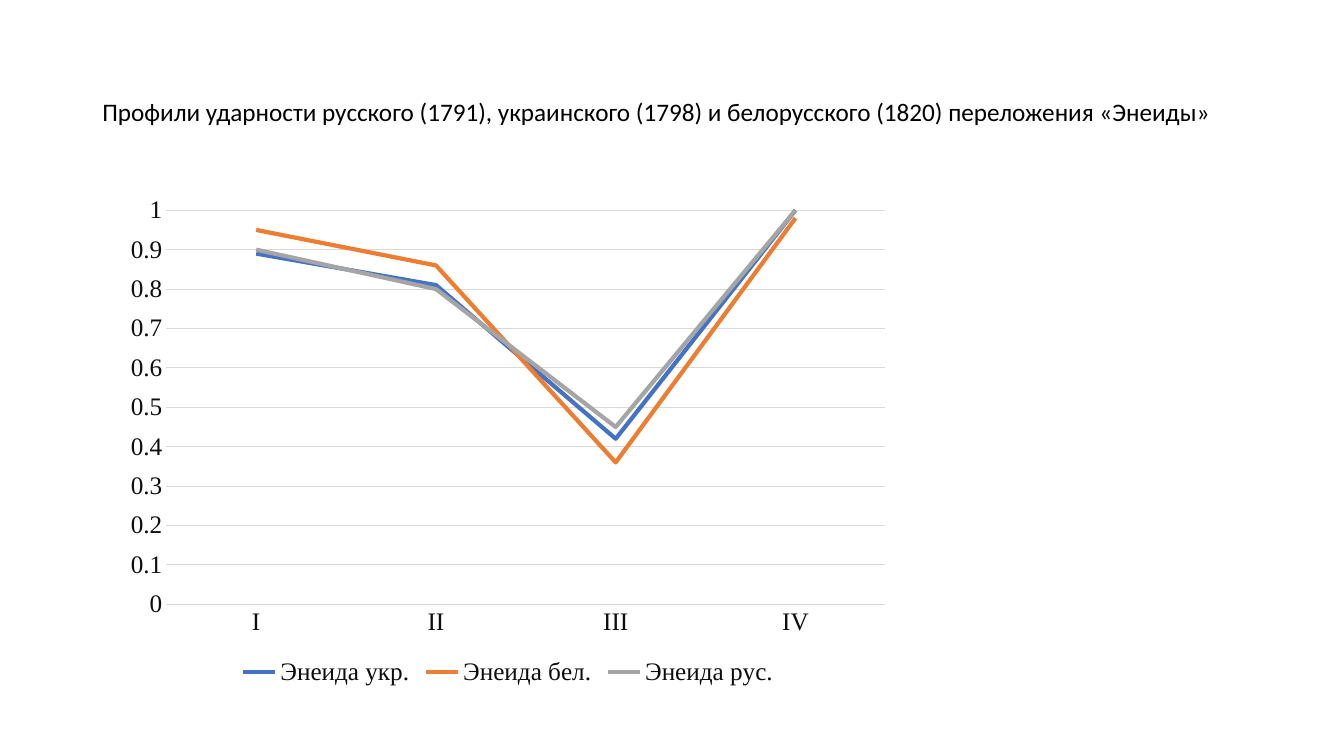
from pptx import Presentation
from pptx.chart.data import CategoryChartData
from pptx.dml.color import RGBColor
from pptx.enum.chart import XL_CHART_TYPE as ChartType
from pptx.enum.chart import XL_LEGEND_POSITION as LegendPosition
from pptx.enum.chart import XL_MARKER_STYLE as MarkerStyle
from pptx.enum.chart import XL_TICK_MARK as TickMark
from pptx.enum.text import MSO_ANCHOR as Anchor
from pptx.enum.text import PP_ALIGN as Align
from pptx.util import Cm, Pt

COLORS = {
    "title": "000000",
    "labels": "0D0D0D",
    "grid": "D9D9D9",
    "ukrainian": "4472C4",
    "belarusian": "ED7D31",
    "russian": "A5A5A5",
}
TITLE = ("Профили ударности русского (1791), украинского (1798) "
         "и белорусского (1820) переложения «Энеиды»")
FEET = ["I", "II", "III", "IV"]
PROFILES = [
    ("Энеида укр.", "ukrainian", (0.89, 0.81, 0.42, 1)),
    ("Энеида бел.", "belarusian", (0.95, 0.86, 0.36, 0.98)),
    ("Энеида рус.", "russian", (0.9, 0.8, 0.45, 1)),
]


def color(name):
    return RGBColor.from_string(COLORS[name])


def style_font(font, face, color_name):
    font.name = face
    font.size = Pt(18)
    font.color.rgb = color(color_name)


def style_line(line, color_name, width):
    line.color.rgb = color(color_name)
    line.width = Pt(width)


def add_title(slide, left, top, width, height):
    frame = slide.shapes.add_textbox(left, top, width, height).text_frame
    frame.word_wrap = True
    frame.vertical_anchor = Anchor.MIDDLE
    heading = frame.paragraphs[0]
    heading.text = TITLE
    heading.alignment = Align.LEFT
    heading.line_spacing = 0.9
    style_font(heading.runs[0].font, "Calibri", "title")


def add_stress_chart(slide, left, top, width, height):
    stress_data = CategoryChartData()
    stress_data.categories = FEET
    for name, _, shares in PROFILES:
        stress_data.add_series(name, shares)
    chart = slide.shapes.add_chart(
        ChartType.LINE, left, top, width, height, stress_data).chart
    chart.has_title = False
    style_font(chart.font, "Times New Roman", "labels")

    # Profile lines
    for profile, (_, color_name, _) in zip(chart.plots[0].series, PROFILES):
        profile.smooth = False
        profile.marker.style = MarkerStyle.NONE
        style_line(profile.format.line, color_name, 3)
    chart.plots[0].vary_by_categories = False

    # Axes
    feet_axis, share_axis = chart.category_axis, chart.value_axis
    for axis in (feet_axis, share_axis):
        axis.major_tick_mark = axis.minor_tick_mark = TickMark.NONE
        style_font(axis.tick_labels.font, "Times New Roman", "labels")
    style_line(feet_axis.format.line, "grid", 0.75)
    share_axis.minimum_scale = 0
    share_axis.maximum_scale = 1
    share_axis.major_unit = 0.1
    share_axis.format.line.fill.background()
    style_line(share_axis.major_gridlines.format.line, "grid", 0.75)

    # Legend
    chart.has_legend = True
    chart.legend.position = LegendPosition.BOTTOM
    chart.legend.include_in_layout = False
    style_font(chart.legend.font, "Times New Roman", "labels")


def main():
    deck = Presentation()
    deck.slide_width, deck.slide_height = Cm(33.87), Cm(19.05)
    slide = deck.slides.add_slide(deck.slide_layouts[6])
    add_title(slide, Cm(2.33), Cm(1.01), Cm(29.21), Cm(3.68))
    add_stress_chart(slide, Cm(2.9), Cm(4.7), Cm(19.81), Cm(12.7))
    deck.save("out.pptx")


if __name__ == "__main__":
    main()
